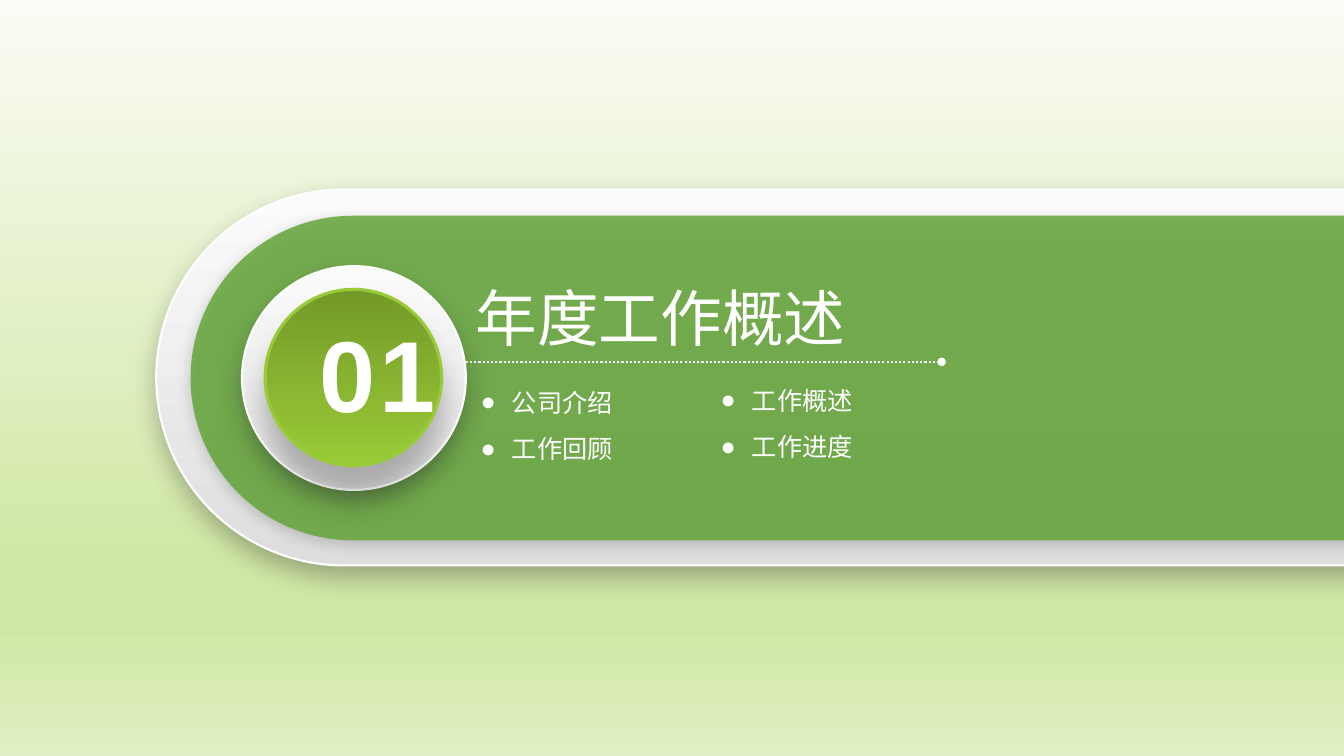
from copy import deepcopy

from lxml.etree import SubElement
from pptx import Presentation
from pptx.dml.color import RGBColor
from pptx.enum.dml import MSO_LINE
from pptx.enum.shapes import MSO_CONNECTOR, MSO_SHAPE as SHAPE
from pptx.enum.text import MSO_AUTO_SIZE as AUTO_SIZE
from pptx.oxml.ns import qn
from pptx.util import Inches, Pt

NUMBER = "01"
TITLE = "年度工作概述"
TOPICS = [
    ["公司介绍", "工作回顾"],
    ["工作概述", "工作进度"],
]
TOPIC_STARTS = [(4.67, 3.79), (7.05, 3.77)]
TOPIC_STEP = 0.46
FONT = "Arial"

WHITE = RGBColor(0xFF, 0xFF, 0xFF)
BAND_GREEN = RGBColor(0x63, 0xA5, 0x37)
LIME = RGBColor(0x99, 0xCB, 0x38)
OLIVE = RGBColor(0x73, 0x9A, 0x28)
SILVER = RGBColor(0xFB, 0xFB, 0xFB)
GREY = RGBColor(0xDE, 0xDE, 0xDE)
CHARCOAL = RGBColor(0x26, 0x26, 0x26)
BLACK = RGBColor(0, 0, 0)
MIST = RGBColor(0xFA, 0xFC, 0xF5)
MEADOW = RGBColor(0xD1, 0xE8, 0xA5)
PALE_GREEN = RGBColor(0xE0, 0xEF, 0xC3)

BACKDROP = [(0, MIST), (0.74, MEADOW), (0.83, MEADOW), (1, PALE_GREEN)]
METAL = [(0, SILVER), (1, GREY)]
BUTTON = [(0, OLIVE), (1, LIME)]
METAL_SHADOW = (CHARCOAL, 33, 18, 8)
BAND_SHADOW = (BLACK, 22, 11, 3)
BUTTON_SHADOW = (CHARCOAL, 28, 18, 18)


def add_alpha(color, percent):
    SubElement(color, qn("a:alpha"), val=str(percent * 1000))


def paint_gradient(fill, owner, stops):
    fill.gradient()
    fill.gradient_angle = 270
    stop_list = next(owner.iter(qn("a:gsLst")))
    for _ in stops[2:]:
        stop_list.append(deepcopy(stop_list[0]))
    for stop, (position, color) in zip(fill.gradient_stops, stops):
        stop.position = position
        stop.color.rgb = color


def add_panel(shapes, kind, box, shadow, stops=None, edge=None, edge_width=1.5):
    panel = shapes.add_shape(kind, *map(Inches, box))
    if kind == SHAPE.ROUNDED_RECTANGLE:
        panel.adjustments[0] = 0.5
    properties = panel.element.spPr
    if stops:
        paint_gradient(panel.fill, properties, stops)
    else:
        panel.fill.solid()
        panel.fill.fore_color.rgb = BAND_GREEN
        add_alpha(next(properties.iter(qn("a:srgbClr"))), 84)
    if edge is None:
        panel.line.fill.background()
    else:
        panel.line.color.rgb = edge
        panel.line.width = Pt(edge_width)
    panel.shadow.inherit = False
    color, alpha, blur, distance = shadow
    outer = SubElement(
        properties.find(qn("a:effectLst")), qn("a:outerShdw"),
        blurRad=str(Pt(blur)), dist=str(Pt(distance)), dir="5400000",
        algn="t", rotWithShape="0",
    )
    add_alpha(SubElement(outer, qn("a:srgbClr"), val=str(color)), alpha)


def add_text(shapes, text, box, size, bold=False, spacing=None, bullet=None):
    frame = shapes.add_textbox(*map(Inches, box)).text_frame
    frame.word_wrap = False
    frame.auto_size = AUTO_SIZE.SHAPE_TO_FIT_TEXT
    paragraph = frame.paragraphs[0]
    if bullet:
        properties = paragraph._p.get_or_add_pPr()
        properties.set("marL", str(Inches(0.31)))
        properties.set("indent", str(Inches(-0.31)))
        SubElement(properties, qn("a:buFont"), typeface=FONT)
        SubElement(properties, qn("a:buChar"), char=bullet)
    run = paragraph.add_run()
    run.text = text
    run.font.name = FONT
    run.font.size = Pt(size)
    run.font.bold = bold
    run.font.color.rgb = WHITE
    if spacing:
        run._r.get_or_add_rPr().set("spc", str(spacing * 100))


def add_divider(shapes, left, right, height):
    divider = shapes.add_connector(
        MSO_CONNECTOR.STRAIGHT, Inches(left), Inches(height), Inches(right), Inches(height)
    )
    divider.line.color.rgb = WHITE
    divider.line.width = Pt(1.5)
    divider.line.dash_style = MSO_LINE.ROUND_DOT
    properties = divider.element.spPr
    SubElement(properties.find(qn("a:ln")), qn("a:tailEnd"), type="oval")
    SubElement(properties, qn("a:effectLst"))


def main():
    deck = Presentation()
    deck.slide_width, deck.slide_height = Inches(13.33), Inches(7.5)
    slide = deck.slides.add_slide(deck.slide_layouts[6])
    paint_gradient(slide.background.fill, slide.element, BACKDROP)
    shapes = slide.shapes

    add_panel(shapes, SHAPE.ROUNDED_RECTANGLE, (1.55, 1.88, 18.5, 3.73),
              METAL_SHADOW, METAL, WHITE)
    add_panel(shapes, SHAPE.ROUNDED_RECTANGLE, (1.89, 2.14, 15.96, 3.22), BAND_SHADOW)
    add_divider(shapes, 4.62, 9.34, 3.59)
    add_text(shapes, TITLE, (4.62, 2.73, 3.9, 0.84), 44)
    for (left, top), column in zip(TOPIC_STARTS, TOPICS):
        for row, topic in enumerate(column):
            add_text(shapes, topic, (left, top + row * TOPIC_STEP, 1.53, 0.4), 18, bullet="●")

    badge = shapes.add_group_shape().shapes
    add_panel(badge, SHAPE.OVAL, (2.4, 2.64, 2.22, 2.22), METAL_SHADOW, METAL, WHITE)
    add_panel(badge, SHAPE.OVAL, (2.63, 2.87, 1.75, 1.75), BUTTON_SHADOW, BUTTON, LIME, 2.25)
    add_text(badge, NUMBER, (3.07, 3.04, 1.41, 1.31), 72, bold=True, spacing=3)
    deck.save("out.pptx")


if __name__ == "__main__":
    main()
